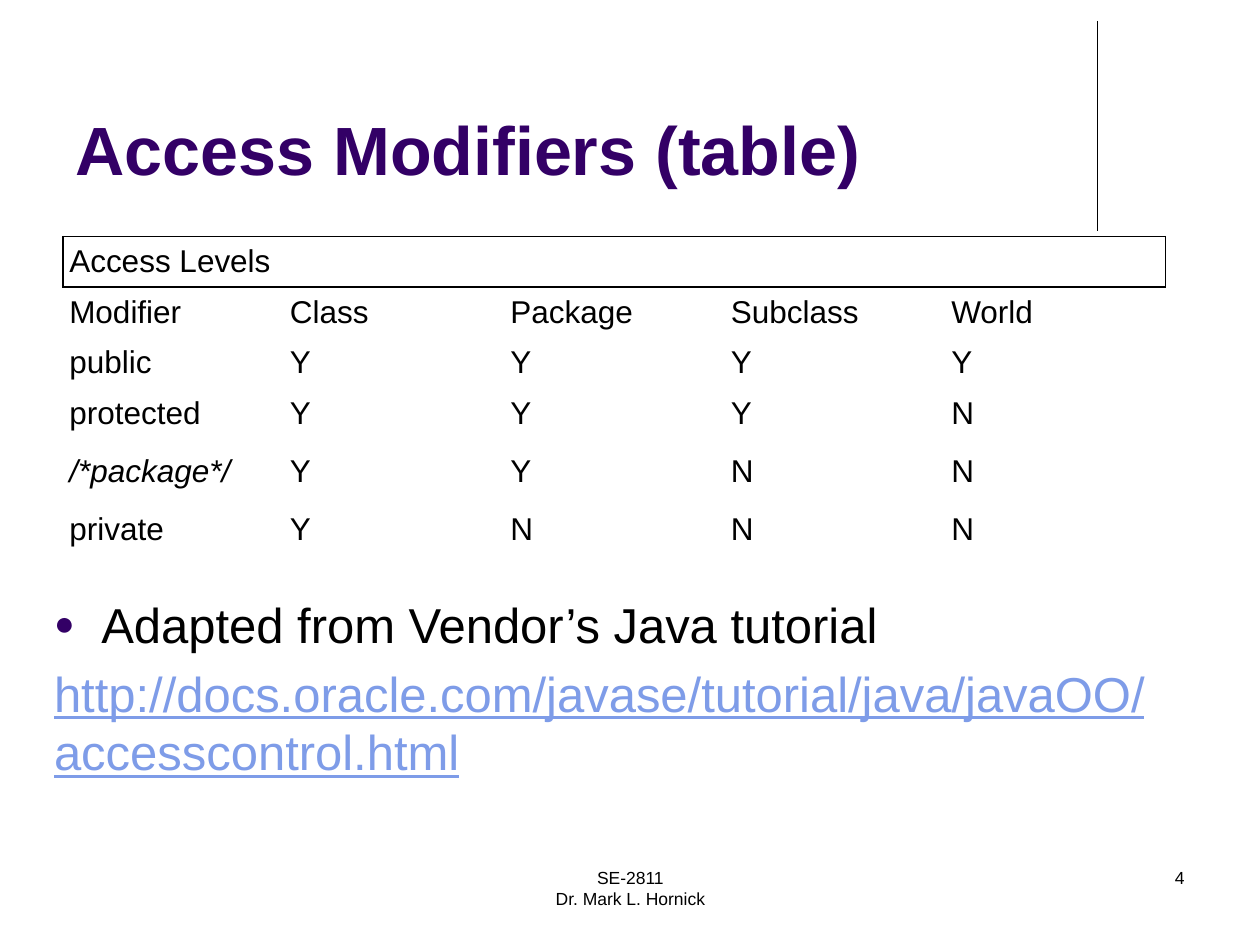
"""Build the access modifiers slide with its table, source note and footer."""
from dataclasses import dataclass

from lxml.etree import SubElement
from pptx import Presentation
from pptx.dml.color import RGBColor
from pptx.enum.shapes import MSO_CONNECTOR as Connector
from pptx.enum.text import MSO_ANCHOR as Anchor, PP_ALIGN as Align
from pptx.oxml.ns import qn
from pptx.util import Pt

FONT = "Arial"
BLACK, PURPLE, LINK_BLUE = "000000", "330066", "7E9CE8"
NO_GRID_STYLE = "{2D5ABB26-0587-4C30-8999-92F81FD0307C}"
COLUMNS, COLUMN_WIDTH = 5, 126
ROW_HEIGHTS = (28.8, 28.8, 28.8, 28.8, 37.4, 28.8)
ROWS = (
    ("Access Levels",),
    ("Modifier", "Class", "Package", "Subclass", "World"),
    ("public", "Y", "Y", "Y", "Y"),
    ("protected", "Y", "Y", "Y", "N"),
    ("/*package*/", "Y", "Y", "N", "N"),
    ("private", "Y", "N", "N", "N"),
)


@dataclass
class TextBlock:
    left: float
    top: float
    width: float
    height: float
    lines: tuple[str, ...]
    size: float
    color: str = BLACK
    bold: bool = False
    align: Align = Align.LEFT
    anchor: Anchor = Anchor.TOP


TITLE = TextBlock(36, 9.4, 594, 102, ("Access Modifiers (table)",), 39, PURPLE,
                  bold=True, anchor=Anchor.BOTTOM)
BODY = TextBlock(23.8, 336.2, 660.2, 147, (
    "Adapted from Vendor’s Java tutorial",
    "http://docs.oracle.com/javase/tutorial/java/javaOO/accesscontrol.html",
), 28)
COURSE = TextBlock(246.2, 492, 228, 36, ("SE-2811", "Dr. Mark L. Hornick"), 10,
                   align=Align.CENTER)
PAGE_NUMBER = TextBlock(516, 492, 168, 36, ("4",), 10, align=Align.RIGHT)


def rgb(value: str) -> RGBColor:
    return RGBColor.from_string(value)


def style_font(font, size: float, color: str, bold: bool = False) -> None:
    font.name, font.size, font.bold = FONT, Pt(size), bold
    font.color.rgb = rgb(color)


def add_text(slide, block: TextBlock):
    box = slide.shapes.add_textbox(
        Pt(block.left), Pt(block.top), Pt(block.width), Pt(block.height))
    text_frame = box.text_frame
    text_frame.word_wrap = True
    text_frame.vertical_anchor = block.anchor
    text_frame.text = "\n".join(block.lines)
    for paragraph in text_frame.paragraphs:
        paragraph.alignment = block.align
        style_font(paragraph.runs[0].font, block.size, block.color, block.bold)
    return text_frame


def add_bullet(paragraph, indent: float) -> None:
    properties = paragraph._p.get_or_add_pPr()
    properties.set("marL", str(Pt(indent)))
    properties.set("indent", str(-Pt(indent)))
    color = SubElement(properties, qn("a:buClr"))
    SubElement(color, qn("a:srgbClr"), val=PURPLE)
    SubElement(properties, qn("a:buSzPct"), val="70000")
    SubElement(properties, qn("a:buFont"), typeface=FONT)
    SubElement(properties, qn("a:buChar"), char="●")


def add_body(slide) -> None:
    note, link = add_text(slide, BODY).paragraphs
    add_bullet(note, 27)
    link.space_before = Pt(5.6)
    link.runs[0].font.underline = True
    link.runs[0].font.color.rgb = rgb(LINK_BLUE)


def add_borders(cell, sides: str) -> None:
    properties = cell._tc.get_or_add_tcPr()
    for position, side in enumerate(sides):
        line = properties.makeelement(qn(f"a:ln{side}"), {"w": str(Pt(1))})
        fill = SubElement(line, qn("a:solidFill"))
        SubElement(fill, qn("a:srgbClr"), val=BLACK)
        properties.insert(position, line)


def add_access_table(slide) -> None:
    frame = slide.shapes.add_table(
        len(ROWS), COLUMNS, Pt(36), Pt(135.2),
        Pt(COLUMNS * COLUMN_WIDTH), Pt(sum(ROW_HEIGHTS)))
    table = frame.table
    table.first_row = table.horz_banding = False
    table._tbl.tblPr.find(qn("a:tableStyleId")).text = NO_GRID_STYLE
    table.cell(0, 0).merge(table.cell(0, COLUMNS - 1))
    for row, height, words in zip(table.rows, ROW_HEIGHTS, ROWS):
        row.height = Pt(height)
        for cell, word in zip(row.cells, words):
            cell.text = word
            cell.vertical_anchor = Anchor.MIDDLE
            cell.margin_left = cell.margin_right = Pt(3.6)
            cell.margin_top = cell.margin_bottom = Pt(3.6)
            cell.fill.background()
            font = cell.text_frame.paragraphs[0].runs[0].font
            style_font(font, 18, BLACK)
            font.italic = word.startswith("/*")
    for column, sides in enumerate(("LRTB", "T", "T", "T", "RT")):
        add_borders(table.cell(0, column), sides)


def add_rule(slide) -> None:
    rule = slide.shapes.add_connector(
        Connector.STRAIGHT, Pt(627), Pt(12), Pt(627), Pt(132))
    rule.line.color.rgb = rgb(BLACK)
    rule.line.width = Pt(0.75)
    SubElement(rule._element.spPr, qn("a:effectLst"))


def main() -> None:
    presentation = Presentation()
    presentation.slide_width, presentation.slide_height = Pt(720), Pt(540)
    slide = presentation.slides.add_slide(presentation.slide_layouts[6])
    add_rule(slide)
    add_text(slide, TITLE)
    add_access_table(slide)
    add_body(slide)
    for block in (COURSE, PAGE_NUMBER):
        add_text(slide, block)
    presentation.save("out.pptx")


if __name__ == "__main__":
    main()
